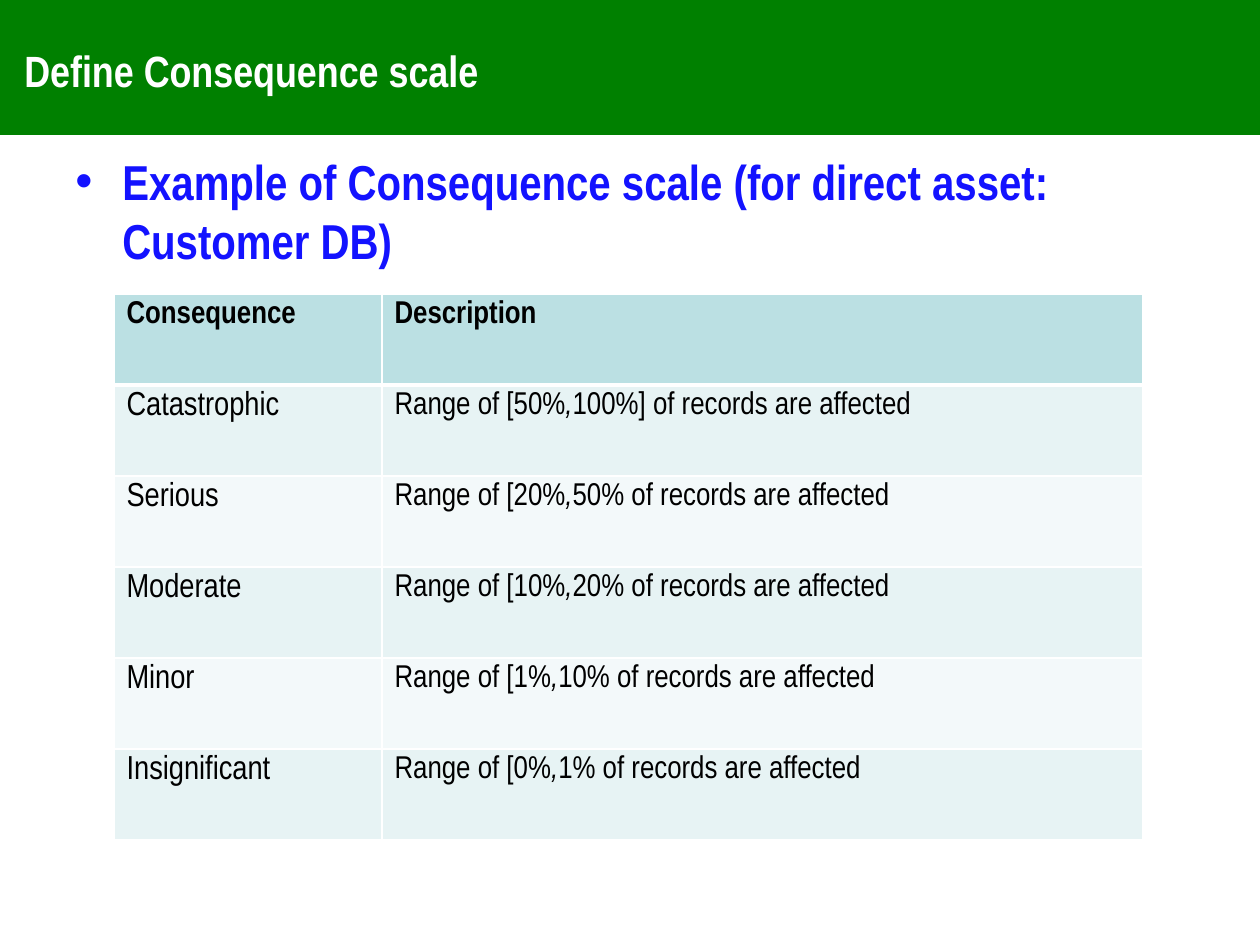
from lxml.etree import SubElement
from pptx import Presentation
from pptx.dml.color import RGBColor
from pptx.enum.shapes import MSO_SHAPE
from pptx.enum.text import MSO_ANCHOR
from pptx.oxml.ns import qn
from pptx.util import Emu, Pt

SCALE = 914400 / 126
FONT = "Arial Narrow"
GREEN = RGBColor(0x00, 0x80, 0x00)
BLUE = RGBColor(0x13, 0x12, 0xFF)
BLACK = RGBColor(0x00, 0x00, 0x00)
WHITE = RGBColor(0xFF, 0xFF, 0xFF)
HEADER_FILL = RGBColor(0xBB, 0xE0, 0xE3)
BAND_FILLS = (RGBColor(0xE7, 0xF3, 0xF4), RGBColor(0xF3, 0xF9, 0xFA))

HEADINGS = ("Consequence", "Description")
CONSEQUENCES = (
    ("Catastrophic", "50%", "100%]"),
    ("Serious", "20%", "50%"),
    ("Moderate", "10%", "20%"),
    ("Minor", "1%", "10%"),
    ("Insignificant", "0%", "1%"),
)


def px(length):
    return Emu(round(length * SCALE))


def write(paragraph, text, size=18, color=BLACK, bold=False, italic=False):
    """Append one formatted run to the paragraph."""
    run = paragraph.add_run()
    run.text = text
    font = run.font
    font.name, font.size = FONT, Pt(size)
    font.bold, font.italic = bold, italic
    font.color.rgb = color


def add_bullet(paragraph, indent):
    properties = paragraph._p.get_or_add_pPr()
    properties.set("marL", str(px(indent)))
    properties.set("indent", str(px(-indent)))
    SubElement(properties, qn("a:buFont"), typeface="Arial")
    SubElement(properties, qn("a:buChar"), char="•")


def set_borders(cell, **widths):
    """Draw white cell borders; widths in points are keyed by side L, R, T, B."""
    properties = cell._tc.get_or_add_tcPr()
    for index, side in enumerate("LRTB"):
        line = SubElement(properties, qn(f"a:ln{side}"), w=str(Pt(widths.get(side, 1))))
        fill = SubElement(line, qn("a:solidFill"))
        SubElement(fill, qn("a:srgbClr"), val=str(WHITE))
        properties.insert(index, line)


class SlideBuilder:
    def __init__(self, slide):
        self.slide = slide

    def band(self, left, top, width, height, color):
        shape = self.slide.shapes.add_shape(
            MSO_SHAPE.RECTANGLE, px(left), px(top), px(width), px(height))
        shape.shadow.inherit = False
        shape.fill.solid()
        shape.fill.fore_color.rgb = color
        shape.line.fill.background()

    def text(self, left, top, width, height, text,
             anchor=MSO_ANCHOR.TOP, bullet_indent=0, **style):
        box = self.slide.shapes.add_textbox(px(left), px(top), px(width), px(height))
        frame = box.text_frame
        frame.word_wrap = True
        frame.vertical_anchor = anchor
        paragraph = frame.paragraphs[0]
        if bullet_indent:
            add_bullet(paragraph, bullet_indent)
        write(paragraph, text, **style)

    def table(self, left, top, column_widths, row_height, row_count):
        table = self.slide.shapes.add_table(
            row_count, len(column_widths), px(left), px(top),
            px(sum(column_widths)), px(row_height * row_count)).table
        for column, width in zip(table.columns, column_widths):
            column.width = px(width)
        for index, row in enumerate(table.rows):
            row.height = px(row_height)
            for cell in row.cells:
                cell.fill.solid()
                cell.fill.fore_color.rgb = (
                    BAND_FILLS[(index - 1) % 2] if index else HEADER_FILL)
                set_borders(cell, T=3 if index == 1 else 1, B=1 if index else 3)
        return table


def fill_consequence_table(table):
    def paragraph_at(row, column):
        return table.cell(row, column).text_frame.paragraphs[0]

    for column, heading in enumerate(HEADINGS):
        write(paragraph_at(0, column), heading, bold=True)
    for row, (name, low, high) in enumerate(CONSEQUENCES, start=1):
        write(paragraph_at(row, 0), name, size=19)
        description = paragraph_at(row, 1)
        write(description, f"Range of [{low}")
        write(description, ",", italic=True)
        write(description, f"{high} of records are affected")


def main():
    presentation = Presentation()
    presentation.slide_width, presentation.slide_height = px(1260), px(945)
    builder = SlideBuilder(presentation.slides.add_slide(presentation.slide_layouts[6]))

    builder.band(0, -4, 1260, 139, GREEN)
    builder.text(12, 27, 1134, 87, "Define Consequence scale",
                 anchor=MSO_ANCHOR.MIDDLE, size=25, color=WHITE, bold=True)
    builder.text(63, 145, 1134, 699,
                 "Example of Consequence scale (for direct asset: Customer DB)",
                 bullet_indent=47, size=28, color=BLUE, bold=True)
    fill_consequence_table(
        builder.table(114, 294, (268, 761), 91, len(CONSEQUENCES) + 1))
    presentation.save("out.pptx")


if __name__ == "__main__":
    main()
